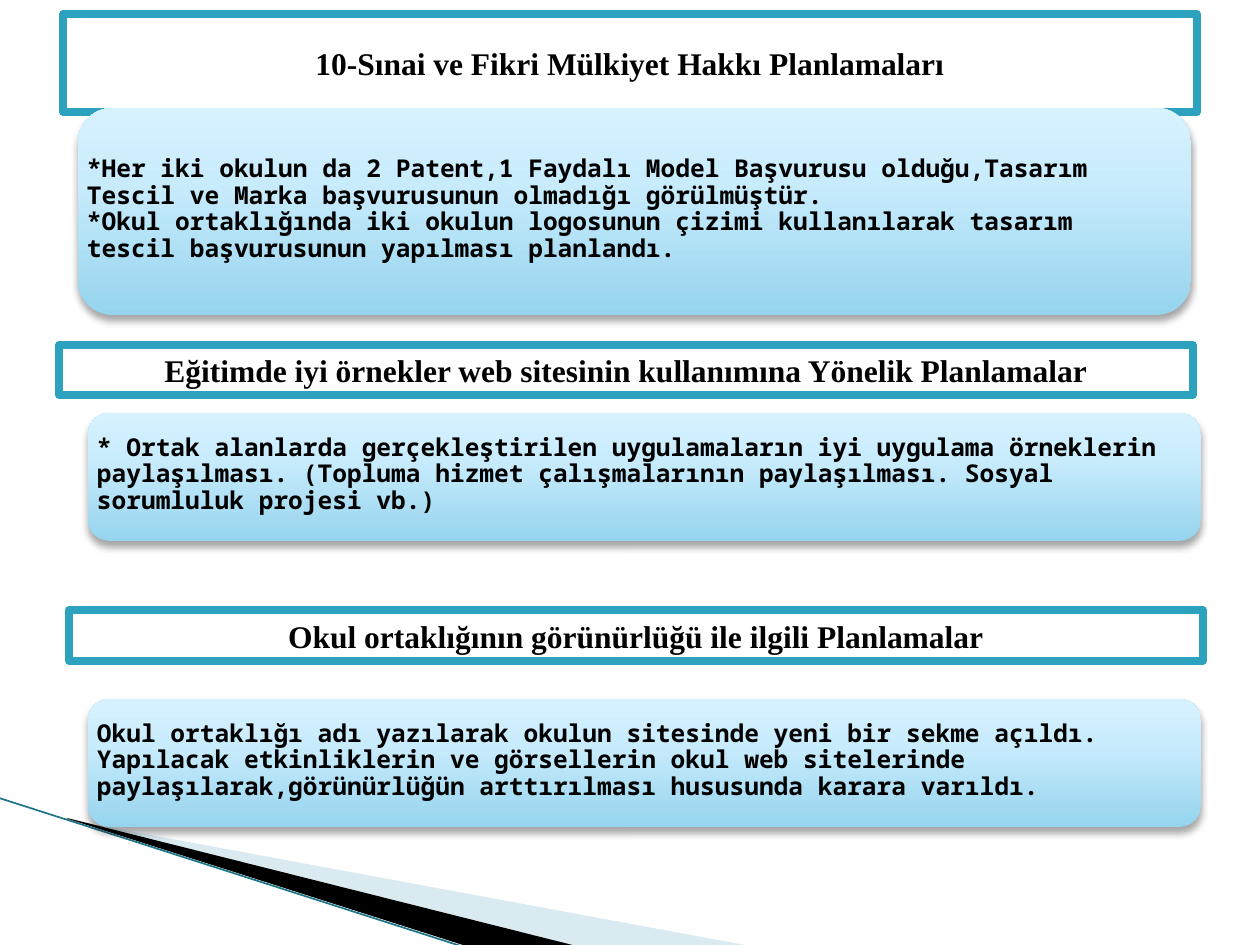
from pptx import Presentation
from pptx.dml.color import RGBColor
from pptx.enum.shapes import MSO_CONNECTOR, MSO_SHAPE
from pptx.enum.text import MSO_ANCHOR, MSO_AUTO_SIZE, PP_ALIGN
from pptx.oxml import parse_xml
from pptx.oxml.ns import nsdecls, qn
from pptx.util import Emu, Pt
from lxml.etree import SubElement

PX = 914400 // 126
COLORS = {
    "white": "FFFFFF", "black": "000000", "border": "2DA2BF",
    "wedge": "A0CBDC", "edge": "1B7587",
    "panel_bottom": "96D4EE", "panel_middle": "C9ECFC", "panel_top": "D7F2FF",
}
HEADING_FONT = "Times New Roman"
BODY_FONT = "Noto Sans Mono"

TITLE = ("10-Sınai ve Fikri Mülkiyet Hakkı Planlamaları", (63, 14, 1134, 98))
HEADINGS = [
    ("Eğitimde iyi örnekler web sitesinin kullanımına Yönelik Planlamalar",
     (59, 345, 1134, 50)),
    ("Okul ortaklığının görünürlüğü ile ilgili Planlamalar",
     (69, 610, 1134, 51)),
]
PANELS = [
    (["*Her iki okulun da 2 Patent,1 Faydalı Model Başvurusu olduğu,Tasarım "
      "Tescil ve Marka başvurusunun olmadığı görülmüştür.",
      "*Okul ortaklığında iki okulun logosunun çizimi kullanılarak tasarım "
      "tescil başvurusunun yapılması planlandı."],
     (78, 108, 1113, 207)),
    (["* Ortak alanlarda gerçekleştirilen uygulamaların iyi uygulama örneklerin "
      "paylaşılması. (Topluma hizmet çalışmalarının paylaşılması. Sosyal "
      "sorumluluk projesi vb.)"],
     (88, 413, 1113, 128)),
    (["Okul ortaklığı adı yazılarak okulun sitesinde yeni bir sekme açıldı. "
      "Yapılacak etkinliklerin ve görsellerin okul web sitelerinde "
      "paylaşılarak,görünürlüğün arttırılması hususunda karara varıldı."],
     (88, 699, 1113, 128)),
]


def px(*lengths):
    return [Emu(length * PX) for length in lengths]


def color(name):
    return RGBColor.from_string(COLORS[name])


def write(frame, paragraphs, *, font, size, align=PP_ALIGN.LEFT, spacing=1.0, inset=9):
    frame.word_wrap = True
    frame.auto_size = MSO_AUTO_SIZE.NONE
    frame.vertical_anchor = MSO_ANCHOR.MIDDLE
    frame.margin_left = frame.margin_right = Emu(inset * PX)
    frame.margin_top = frame.margin_bottom = Emu(inset * PX)
    for index, text in enumerate(paragraphs):
        para = frame.add_paragraph() if index else frame.paragraphs[0]
        para.alignment = align
        para.line_spacing = spacing
        para.space_before = para.space_after = Pt(0)
        span = para.add_run()
        span.text = text
        span.font.name = font
        span.font.size = Pt(size)
        span.font.bold = True
        span.font.color.rgb = color("black")


def format_heading(box, text):
    box.fill.solid()
    box.fill.fore_color.rgb = color("white")
    box.line.color.rgb = color("border")
    box.line.width = Pt(4.33)
    write(box.text_frame, [text], font=HEADING_FONT, size=18,
          align=PP_ALIGN.CENTER, inset=6)


def add_title(page, text, place):
    title = page.shapes.title
    title.left, title.top, title.width, title.height = px(*place)
    format_heading(title, text)


def add_heading(page, text, place):
    box = page.shapes.add_shape(MSO_SHAPE.RECTANGLE, *px(*place))
    box.shadow.inherit = False
    format_heading(box, text)


def set_panel_look(box):
    """Give a shape the three-stop vertical gradient and a soft shadow below."""
    stops = [(0, "panel_bottom"), (65, "panel_middle"), (100, "panel_top")]
    stop_xml = "".join(
        f'<a:gs pos="{position * 1000}"><a:srgbClr val="{COLORS[name]}"/></a:gs>'
        for position, name in stops)
    gradient = parse_xml(
        f'<a:gradFill {nsdecls("a")} rotWithShape="1"><a:gsLst>{stop_xml}</a:gsLst>'
        '<a:lin ang="16200000" scaled="0"/></a:gradFill>')
    box.line.fill.background()
    box.shadow.inherit = False
    properties = box.element.spPr
    properties.find(qn("a:prstGeom")).addnext(gradient)
    properties.find(qn("a:effectLst")).append(parse_xml(
        f'<a:outerShdw {nsdecls("a")} blurRad="{Pt(4)}" dist="{Pt(3)}" dir="5400000" '
        f'rotWithShape="0"><a:srgbClr val="{COLORS["black"]}">'
        '<a:alpha val="35000"/></a:srgbClr></a:outerShdw>'))


def add_panel(page, paragraphs, place):
    left, top, width, height = place
    group = page.shapes.add_group_shape()
    panel = group.shapes.add_shape(MSO_SHAPE.ROUNDED_RECTANGLE, *px(*place))
    set_panel_look(panel)
    box = group.shapes.add_textbox(*px(left, top, width - 6, height - 4))
    write(box.text_frame, paragraphs, font=BODY_FONT, size=14, spacing=0.9)


def add_wedge(page, points, fill, alpha=100):
    start, *others = [px(*point) for point in points]
    builder = page.shapes.build_freeform(*start)
    builder.add_line_segments(others, close=True)
    wedge = builder.convert_to_shape()
    wedge.shadow.inherit = False
    wedge.line.fill.background()
    wedge.fill.solid()
    wedge.fill.fore_color.rgb = color(fill)
    if alpha < 100:
        fill_color = wedge.element.spPr.find(qn("a:solidFill"))[0]
        SubElement(fill_color, qn("a:alpha")).set("val", str(alpha * 1000))


def add_edge(page, start, end):
    edge = page.shapes.add_connector(MSO_CONNECTOR.STRAIGHT, *px(*start, *end))
    edge.line.color.rgb = color("edge")
    edge.line.width = Pt(0.95)
    SubElement(edge.element.spPr, qn("a:effectLst"))


def main():
    deck = Presentation()
    deck.slide_width, deck.slide_height = px(1260, 945)
    page = deck.slides.add_slide(deck.slide_layouts[5])
    add_wedge(page, [(69, 820), (750, 946), (575, 946), (69, 819)], "wedge", alpha=40)
    add_wedge(page, [(67, 818), (576, 946), (469, 947), (68, 819)], "black")
    add_edge(page, (-1, 798), (467, 948))
    add_title(page, *TITLE)
    for heading in HEADINGS:
        add_heading(page, *heading)
    for panel in PANELS:
        add_panel(page, *panel)
    deck.save("out.pptx")


if __name__ == "__main__":
    main()
